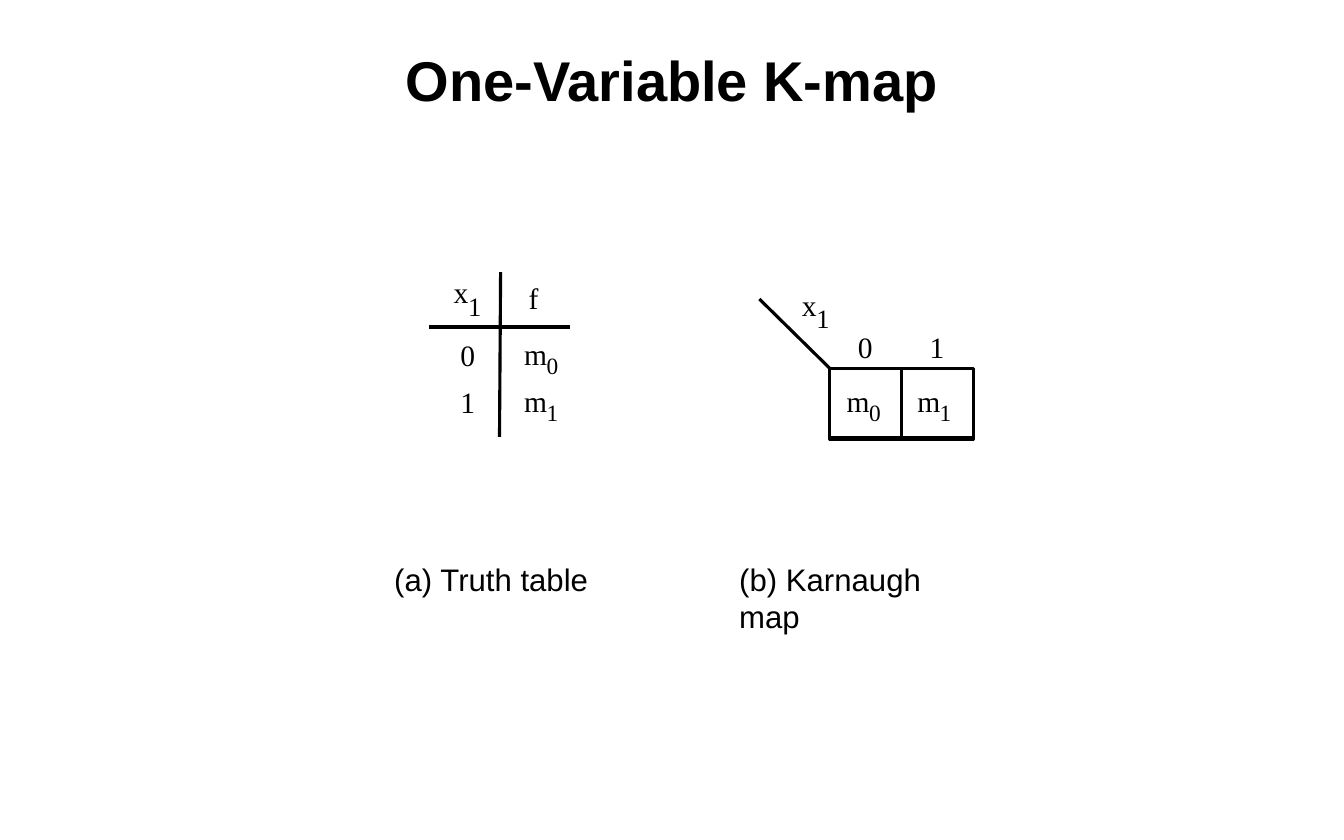
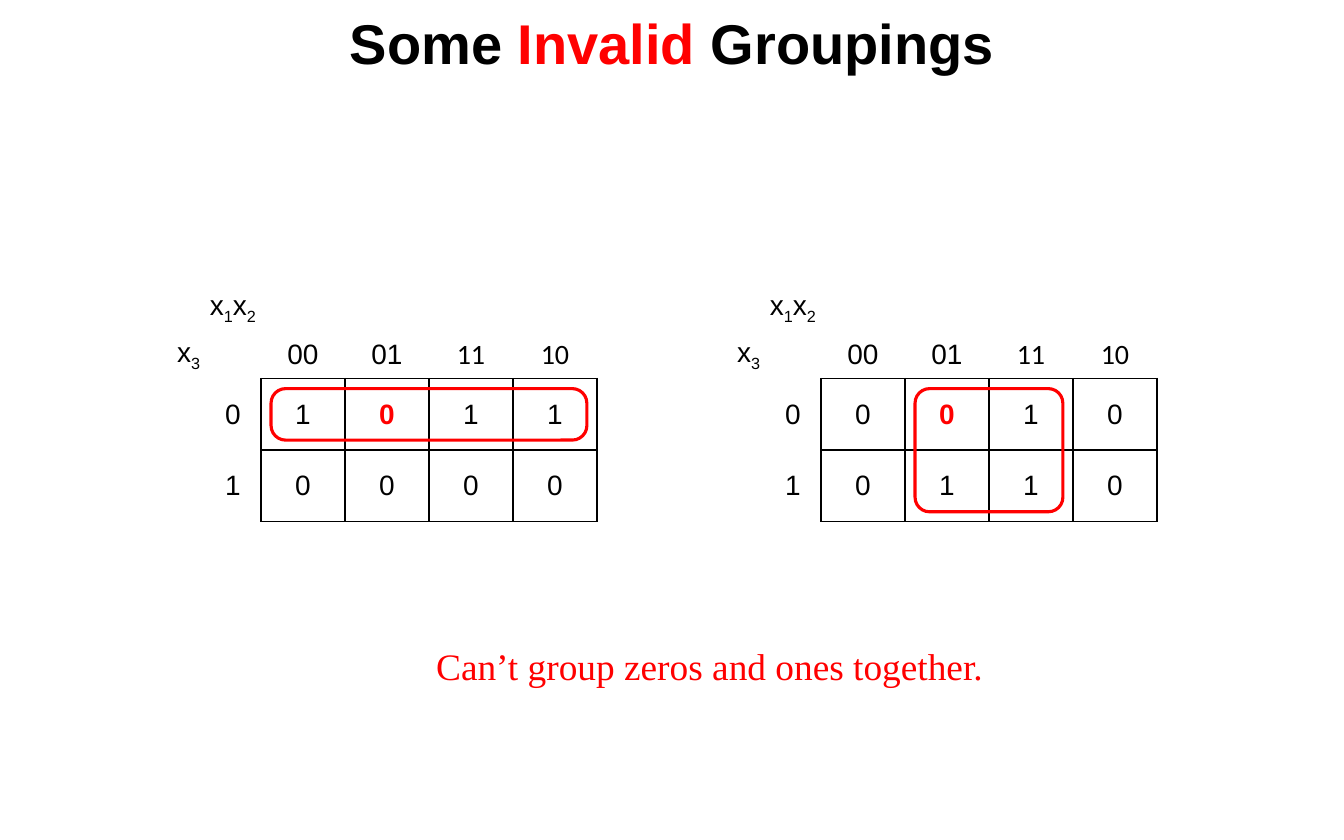
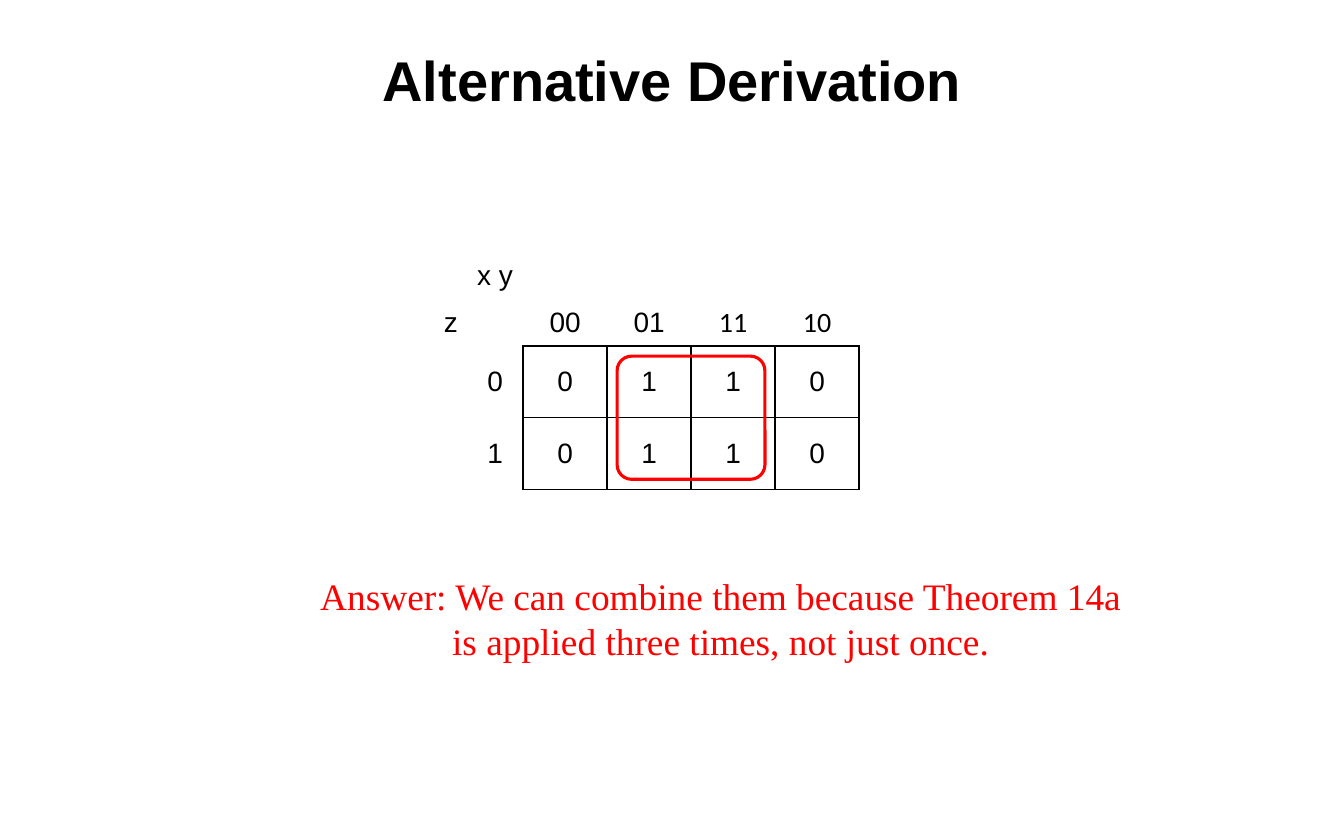
"""Build three slides about Karnaugh maps and their groupings."""

import itertools
from typing import NamedTuple

import lxml.etree
import pptx
import pptx.dml.color
import pptx.enum.shapes
import pptx.enum.text
import pptx.oxml.ns
import pptx.presentation
import pptx.shapes.autoshape
import pptx.shapes.connector
import pptx.shapes.shapetree
import pptx.slide
import pptx.table
import pptx.text.text
import pptx.util

Inches = pptx.util.Inches
Pt = pptx.util.Pt
PP_ALIGN = pptx.enum.text.PP_ALIGN
MSO_ANCHOR = pptx.enum.text.MSO_ANCHOR
MSO_SHAPE = pptx.enum.shapes.MSO_SHAPE
qn = pptx.oxml.ns.qn

BLACK = pptx.dml.color.RGBColor(0x00, 0x00, 0x00)
WHITE = pptx.dml.color.RGBColor(0xFF, 0xFF, 0xFF)
RED = pptx.dml.color.RGBColor(0xFF, 0x00, 0x00)
SANS = "Arial"
SERIF = "Times New Roman"
HEADER_FONTS = {"00": SANS, "01": SANS, "11": "Calibri", "10": "Calibri"}

COLUMN_WIDTHS = (0.5, 0.5, 0.75, 0.75, 0.75, 0.75)
ROW_HEIGHTS = (0.42, 0.42, 0.64, 0.64)
HEADERS = 2
GROUP_INSET = 0.09
GROUP_RADIUS = 0.13


class Area(NamedTuple):
    """A rectangle in inches."""

    left: float
    top: float
    width: float
    height: float


class Span(NamedTuple):
    """A piece of text with its own colour or baseline."""

    text: str
    color: pptx.dml.color.RGBColor = BLACK
    bold: bool = False
    lowered: bool = False


class Symbol(NamedTuple):
    """A letter in a diagram, with an optional subscript."""

    text: str
    left: float
    top: float
    subscript: str = ""


class Segment(NamedTuple):
    """A straight line in inches."""

    start: tuple[float, float]
    end: tuple[float, float]


class Group(NamedTuple):
    """A block of grid cells that is ringed."""

    row: int
    column: int
    rows: int
    columns: int

    def holds(self, row: int, column: int) -> bool:
        """Tell whether a grid cell lies in the group."""
        return (0 <= row - self.row < self.rows
                and 0 <= column - self.column < self.columns)


class KarnaughMap(NamedTuple):
    """A map of three variables with one ringed group."""

    left: float
    top: float
    across: str
    down: str
    values: tuple[str, str]
    group: Group


TITLE_AREA = Area(0, 0.33, 12, 0.75)
HIGH_TITLE_AREA = Area(1, 0, 10, 0.75)

TRUTH_LINES = (
    Segment((5.09, 2.92), (3.83, 2.92)),
    Segment((4.46, 3.9), (4.47, 2.43)),
)
TRUTH_SYMBOLS = (
    Symbol("x", 4.05, 2.45, "1"),
    Symbol("f", 4.72, 2.5),
    Symbol("0", 4.11, 3.01),
    Symbol("1", 4.11, 3.43),
    Symbol("m", 4.68, 3, "0"),
    Symbol("m", 4.68, 3.42, "1"),
)
MAP_BOX = Area(7.41, 3.29, 1.28, 0.63)
MAP_LINES = (
    Segment((8.68, 3.91), (7.41, 3.91)),
    Segment((6.78, 2.67), (7.41, 3.29)),
)
MAP_SYMBOLS = (
    Symbol("x", 7.16, 2.56, "1"),
    Symbol("0", 7.66, 2.94),
    Symbol("1", 8.3, 2.94),
    Symbol("m", 7.56, 3.42, "0"),
    Symbol("m", 8.19, 3.42, "1"),
)
INVALID_MAPS = (
    KarnaughMap(1.33, 2.54, "x1x2", "x3", ("1011", "0000"), Group(0, 0, 1, 4)),
    KarnaughMap(6.33, 2.54, "x1x2", "x3", ("0010", "0110"), Group(0, 1, 2, 2)),
)
VALID_MAP = KarnaughMap(3.67, 2.25, "x y", "z", ("0110", "0110"), Group(0, 1, 2, 2))


def inches(area: Area) -> tuple[pptx.util.Length, ...]:
    """Convert an area to lengths."""
    return tuple(Inches(value) for value in area)


def write_spans(para: pptx.text.text._Paragraph, spans: list[Span],
                size: float, font: str) -> None:
    """Add formatted runs to a paragraph."""
    for span in spans:
        run = para.add_run()
        run.text = span.text
        run.font.name = font
        run.font.size = Pt(size)
        run.font.bold = span.bold
        run.font.color.rgb = span.color
        if span.lowered:
            run.font._element.set("baseline", "-25000")


def variable_spans(name: str) -> list[Span]:
    """Split a variable name so that its digits become subscripts."""
    return [Span("".join(letters), lowered=lowered)
            for lowered, letters in itertools.groupby(name, str.isdigit)]


def add_page(deck: pptx.presentation.Presentation, area: Area,
             *spans: Span) -> pptx.slide.Slide:
    """Add a slide with its title."""
    page = deck.slides.add_slide(deck.slide_layouts.get_by_name("Title Only"))
    title = page.shapes.title
    title.left, title.top, title.width, title.height = inches(area)
    title.text_frame.vertical_anchor = MSO_ANCHOR.MIDDLE
    para = title.text_frame.paragraphs[0]
    para.alignment = PP_ALIGN.CENTER
    write_spans(para, [span._replace(bold=True) for span in spans], 36, SANS)
    return page


def add_text(shapes: pptx.shapes.shapetree._BaseGroupShapes, area: Area,
             text: str, size: float, font: str) -> None:
    """Add plain black text without insets."""
    frame = shapes.add_textbox(*inches(area)).text_frame
    frame.word_wrap = True
    frame.margin_left = frame.margin_top = 0
    frame.margin_right = frame.margin_bottom = 0
    write_spans(frame.paragraphs[0], [Span(text)], size, font)


def add_remark(page: pptx.slide.Slide, area: Area, *lines: str) -> None:
    """Add a red centred remark, one paragraph a line."""
    frame = page.shapes.add_textbox(*inches(area)).text_frame
    frame.word_wrap = True
    frame.text = "\n".join(lines)
    for para in frame.paragraphs:
        para.alignment = PP_ALIGN.CENTER
        font = para.runs[0].font
        font.name = SERIF
        font.size = Pt(24)
        font.color.rgb = RED


def add_symbol(shapes: pptx.shapes.shapetree._BaseGroupShapes,
               symbol: Symbol) -> None:
    """Add a letter and its subscript."""
    wide = symbol.text == "m"
    add_text(shapes, Area(symbol.left, symbol.top, 0.27 if wide else 0.2, 0.32),
             symbol.text, 19, SERIF)
    if symbol.subscript:
        shift, size = (0.2, 15) if wide else (0.13, 17)
        area = Area(symbol.left + shift, symbol.top + 0.14, 0.18, 0.27)
        add_text(shapes, area, symbol.subscript, size, SERIF)


def add_line(shapes: pptx.shapes.shapetree._BaseGroupShapes,
             segment: Segment) -> pptx.shapes.connector.Connector:
    """Add a black straight line."""
    ends = [Inches(value) for value in (*segment.start, *segment.end)]
    line = shapes.add_connector(pptx.enum.shapes.MSO_CONNECTOR.STRAIGHT, *ends)
    line.line.color.rgb = BLACK
    line.line.width = Pt(2)
    lxml.etree.SubElement(line._element.spPr, qn("a:effectLst"))
    return line


def add_outline(shapes: pptx.shapes.shapetree._BaseGroupShapes,
                preset: MSO_SHAPE, area: Area,
                color: pptx.dml.color.RGBColor) -> pptx.shapes.autoshape.Shape:
    """Add an unfilled outlined shape."""
    shape = shapes.add_shape(preset, *inches(area))
    shape.shadow.inherit = False
    shape.fill.background()
    shape.line.color.rgb = color
    shape.line.width = Pt(2)
    return shape


def add_diagram(page: pptx.slide.Slide, lines: tuple[Segment, ...],
                symbols: tuple[Symbol, ...]) -> pptx.shapes.shapetree.GroupShapes:
    """Add a group of lines and letters."""
    shapes = page.shapes.add_group_shape().shapes
    for segment in lines:
        add_line(shapes, segment)
    for symbol in symbols:
        add_symbol(shapes, symbol)
    return shapes


def set_borders(cell: pptx.table._Cell, row: int, column: int) -> None:
    """Draw black edges around grid cells and white edges elsewhere."""
    in_rows, in_columns = row >= HEADERS, column >= HEADERS
    black_edges = {
        "L": in_rows and in_columns,
        "R": in_rows and column >= HEADERS - 1,
        "T": in_rows and in_columns,
        "B": row >= HEADERS - 1 and in_columns,
    }
    thick_edge = {0: "B", 1: "T"}.get(row)
    properties = cell._tc.get_or_add_tcPr()
    for position, (edge, black) in enumerate(black_edges.items()):
        border = lxml.etree.Element(qn(f"a:ln{edge}"))
        border.set("w", str(Pt(3 if edge == thick_edge else 1)))
        fill = lxml.etree.SubElement(border, qn("a:solidFill"))
        color = lxml.etree.SubElement(fill, qn("a:srgbClr"))
        color.set("val", str(BLACK if black else WHITE))
        properties.insert(position, border)


def cell_spans(karnaugh: KarnaughMap, row: int, column: int) -> list[Span]:
    """Give the text of one table cell, marking zeros inside the group."""
    if (row, column) == (0, 1):
        return variable_spans(karnaugh.across)
    if (row, column) == (1, 0):
        return variable_spans(karnaugh.down)
    grid_row, grid_column = row - HEADERS, column - HEADERS
    if row == 1 and grid_column >= 0:
        return [Span(list(HEADER_FONTS)[grid_column])]
    if grid_row >= 0 and column == 1:
        return [Span(str(grid_row))]
    if grid_row >= 0 and grid_column >= 0:
        value = karnaugh.values[grid_row][grid_column]
        wrong = value == "0" and karnaugh.group.holds(grid_row, grid_column)
        return [Span(value, RED if wrong else BLACK, wrong)]
    return []


def add_karnaugh_map(page: pptx.slide.Slide, karnaugh: KarnaughMap) -> None:
    """Add the table of a map and the ring around its group."""
    area = Area(karnaugh.left, karnaugh.top, sum(COLUMN_WIDTHS), sum(ROW_HEIGHTS))
    table = page.shapes.add_table(len(ROW_HEIGHTS), len(COLUMN_WIDTHS),
                                  *inches(area)).table
    table.first_row = table.horz_banding = False
    for column, width in zip(table.columns, COLUMN_WIDTHS):
        column.width = Inches(width)
    for row, height in zip(table.rows, ROW_HEIGHTS):
        row.height = Inches(height)
    for row, column in itertools.product(range(len(ROW_HEIGHTS)),
                                         range(len(COLUMN_WIDTHS))):
        cell = table.cell(row, column)
        cell.fill.solid()
        cell.fill.fore_color.rgb = WHITE
        cell.vertical_anchor = MSO_ANCHOR.MIDDLE
        cell.margin_left = Inches(0.21 if (row, column) == (1, 0) else 0)
        cell.margin_right = cell.margin_top = cell.margin_bottom = 0
        para = cell.text_frame.paragraphs[0]
        para.alignment = PP_ALIGN.CENTER
        spans = cell_spans(karnaugh, row, column)
        header = spans[0].text if spans else ""
        write_spans(para, spans, 18, HEADER_FONTS.get(header, SANS))
        set_borders(cell, row, column)

    group = karnaugh.group
    first_row, first_column = group.row + HEADERS, group.column + HEADERS
    ring_area = Area(
        karnaugh.left + sum(COLUMN_WIDTHS[:first_column]) + GROUP_INSET,
        karnaugh.top + sum(ROW_HEIGHTS[:first_row]) + GROUP_INSET,
        sum(COLUMN_WIDTHS[first_column:first_column + group.columns]) - 2 * GROUP_INSET,
        sum(ROW_HEIGHTS[first_row:first_row + group.rows]) - 2 * GROUP_INSET,
    )
    ring = add_outline(page.shapes, MSO_SHAPE.ROUNDED_RECTANGLE, ring_area, RED)
    ring.adjustments[0] = GROUP_RADIUS / min(ring_area.width, ring_area.height)


def build_one_variable(deck: pptx.presentation.Presentation) -> None:
    """Build the slide with a truth table beside its map."""
    page = add_page(deck, TITLE_AREA, Span("One-Variable K-map"))
    add_text(page.shapes, Area(3.52, 5, 1.82, 0.33), "(a) Truth table", 20, SANS)
    add_text(page.shapes, Area(6.6, 5, 2.2, 0.33), "(b) Karnaugh map", 20, SANS)
    shapes = add_diagram(page, MAP_LINES, MAP_SYMBOLS)
    box = add_outline(shapes, MSO_SHAPE.RECTANGLE, MAP_BOX, BLACK)
    divider = add_line(shapes, Segment((8.05, 3.92), (8.05, 3.29)))
    divider.begin_connect(box, 2)
    divider.end_connect(box, 0)
    add_diagram(page, TRUTH_LINES, TRUTH_SYMBOLS)


def build_invalid_groupings(deck: pptx.presentation.Presentation) -> None:
    """Build the slide with two wrong groupings."""
    page = add_page(deck, HIGH_TITLE_AREA, Span("Some "), Span("Invalid", RED),
                    Span(" Groupings"))
    for karnaugh in INVALID_MAPS:
        add_karnaugh_map(page, karnaugh)
    add_remark(page, Area(3.77, 5.69, 5.13, 0.51),
               "Can’t group zeros and ones together.")


def build_alternative(deck: pptx.presentation.Presentation) -> None:
    """Build the slide with a valid grouping."""
    page = add_page(deck, TITLE_AREA, Span("Alternative Derivation"))
    add_karnaugh_map(page, VALID_MAP)
    add_remark(page, Area(2.67, 5.07, 7.53, 0.91),
               "Answer: We can combine them because Theorem 14a",
               "is applied three times, not just once.")


def main() -> None:
    """Build and save the deck."""
    deck = pptx.Presentation()
    deck.slide_width = Inches(12)
    deck.slide_height = Inches(7.5)
    build_one_variable(deck)
    build_invalid_groupings(deck)
    build_alternative(deck)
    deck.save("out.pptx")


if __name__ == "__main__":
    main()
